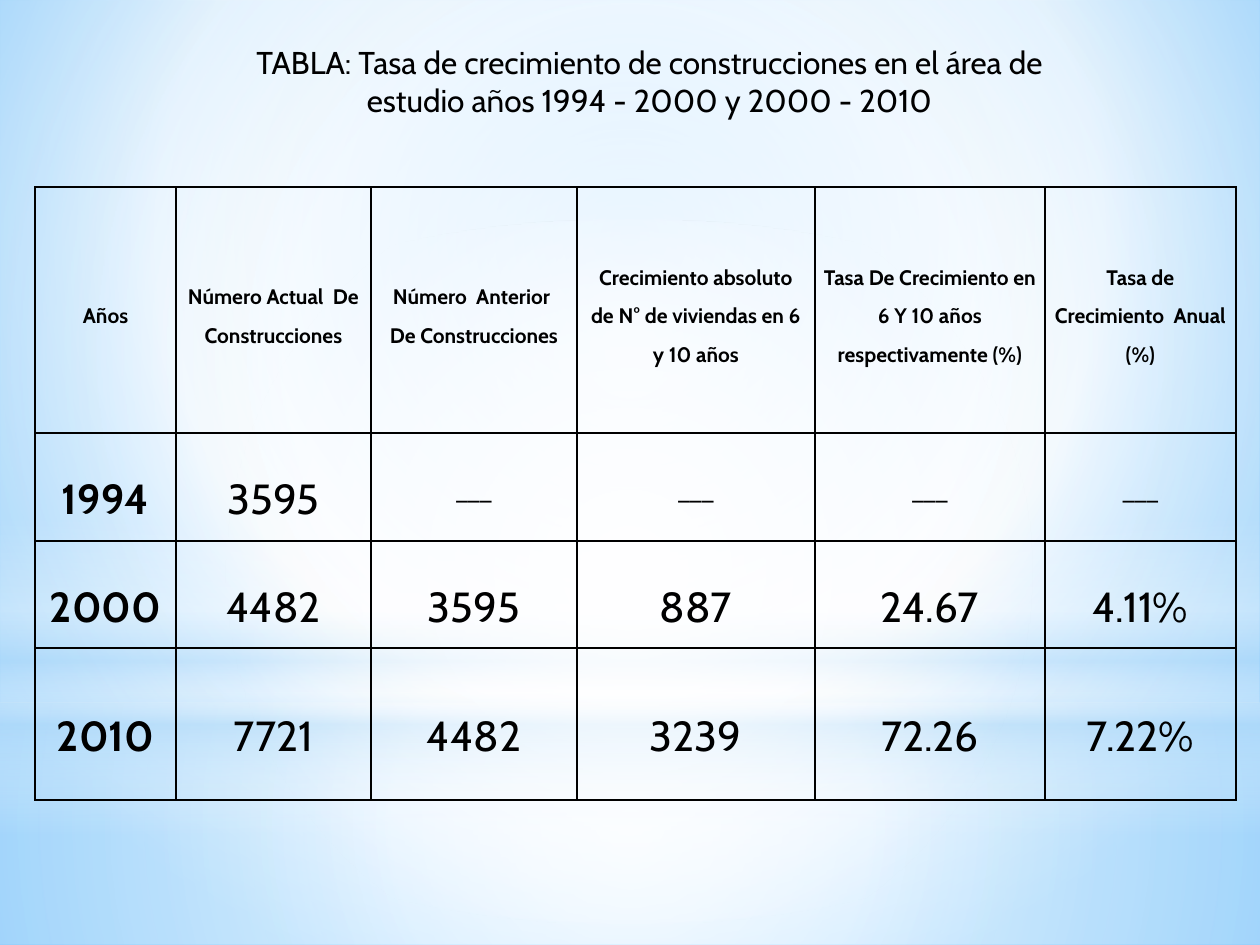
from lxml import etree
from pptx import Presentation
from pptx import util as u
from pptx.dml.color import RGBColor
from pptx.enum import shapes, text
from pptx.oxml import ns

PX = u.Inches(1) / 126
BLACK = RGBColor(0x00, 0x00, 0x00)
WHITE = RGBColor(0xFF, 0xFF, 0xFF)
SKY = RGBColor(0x9E, 0xD5, 0xFF)
BLUE = RGBColor(0x5B, 0xB9, 0xFF)
PALE = RGBColor(0xB4, 0xDC, 0xFA)
FONT = "Cabin"
MID = (50, 50, 50, 50)

HEADS = ["Años", "Número Actual  De Construcciones",
         "Número  Anterior  De Construcciones",
         "Crecimiento absoluto de N° de viviendas en 6 y 10 años",
         "Tasa De Crecimiento en 6 Y 10 años respectivamente (%)",
         "Tasa de Crecimiento  Anual (%)"]
DASH = "___"
ROWS = [HEADS,
        ["1994", "3595", DASH, DASH, DASH, DASH],
        ["2000", "4482", "3595", "887", "24.67", "4.11%"],
        ["2010", "7721", "4482", "3239", "72.26", "7.22%"]]
COLS = [141, 195, 206, 238, 230, 191]
TALL = [246, 108, 107, 152]


def emu(*vals):
    return [round(v * PX) for v in vals]


def apply(obj, **vals):
    for name, val in vals.items():
        setattr(obj, name, val)


def sub(node, tag, **vals):
    return etree.SubElement(node, ns.qn(tag), {k: str(v) for k, v in vals.items()})


def write(frame, words, size, bold=False):
    par = frame.paragraphs[0]
    par.alignment = text.PP_ALIGN.CENTER
    run = par.add_run()
    run.text = words
    apply(run.font, name=FONT, size=u.Pt(size), bold=bold)
    run.font.color.rgb = BLACK
    return par


def blend(node, stops, focus=None):
    """Turn the solid fill in node into a gradient: round with a focus, else vertical."""
    old = node.find(ns.qn("a:solidFill"))
    grad = etree.Element(ns.qn("a:gradFill"), rotWithShape="1")
    node.replace(old, grad)
    steps = sub(grad, "a:gsLst")
    for pos, color, alpha in stops:
        stop = sub(steps, "a:gs", pos=pos * 1000)
        tint = sub(stop, "a:srgbClr", val=color)
        if alpha < 100:
            sub(tint, "a:alpha", val=alpha * 1000)
    if focus:
        ring = sub(grad, "a:path", path="circle")
        sub(ring, "a:fillToRect", **{k: v * 1000 for k, v in zip("ltrb", focus)})
    else:
        sub(grad, "a:lin", ang=5400000, scaled=0)


def glow(slide, box, stops, focus=None, kind=shapes.MSO_SHAPE.RECTANGLE):
    shape = slide.shapes.add_shape(kind, *emu(*box))
    shape.shadow.inherit = False
    shape.line.fill.background()
    shape.fill.solid()
    blend(shape.element.spPr, stops, focus)


def backdrop(slide, box):
    x, y, w, h = box
    # Page colour
    slide.background.fill.solid()
    blend(slide.element.xpath(".//p:bgPr")[0],
          [(0, SKY, 100), (60, WHITE, 100), (100, BLUE, 100)], (20, 10, 20, 60))
    # Veils over the lower and upper parts
    cut = 703
    glow(slide, (x, y + cut, w, h - cut),
         [(0, WHITE, 91), (37, WHITE, 76), (100, PALE, 79)], MID)
    glow(slide, (x, y, w, cut),
         [(0, WHITE, 89), (48, WHITE, 62), (100, PALE, 79)], MID)
    # Horizon band
    glow(slide, (x, y + 519, w, 315),
         [(0, WHITE, 0), (29, WHITE, 30), (45, PALE, 40),
          (55, WHITE, 26), (65, PALE, 60), (100, WHITE, 0)])
    # Central light
    glow(slide, (x, y + 220, w, cut), [(0, WHITE, 100), (56, WHITE, 0)],
         MID, shapes.MSO_SHAPE.OVAL)


def title(slide, box):
    frame = slide.shapes.add_textbox(*emu(*box)).text_frame
    apply(frame, word_wrap=True, auto_size=text.MSO_AUTO_SIZE.SHAPE_TO_FIT_TEXT)
    write(frame, "TABLA: Tasa de crecimiento de construcciones en el área de "
                 "estudio años 1994 - 2000 y 2000 - 2010", 18)


def border(cell):
    props = cell._tc.get_or_add_tcPr()
    for spot, side in enumerate("LRTB"):
        line = etree.Element(ns.qn("a:ln" + side), w=str(u.Pt(1)))
        sub(sub(line, "a:solidFill"), "a:srgbClr", val=BLACK)
        props.insert(spot, line)


def grid(slide, left, top):
    box = emu(left, top, sum(COLS), sum(TALL))
    table = slide.shapes.add_table(len(ROWS), len(COLS), *box).table
    apply(table, first_row=False, horz_banding=False)
    for col, wide in zip(table.columns, emu(*COLS)):
        col.width = wide
    for row, tall in zip(table.rows, emu(*TALL)):
        row.height = tall
    side = u.Inches(0.07)
    for r, row in enumerate(ROWS):
        for c, words in enumerate(row):
            cell = table.cell(r, c)
            apply(cell, vertical_anchor=text.MSO_ANCHOR.MIDDLE, margin_left=side,
                  margin_right=side, margin_top=0, margin_bottom=0)
            size = 12 if r == 0 or words == DASH else 24
            par = write(cell.text_frame, words, size, r == 0 or c == 0)
            apply(par, line_spacing=1.5, space_before=u.Pt(14.4),
                  space_after=u.Pt(14.4))
            cell.fill.background()
            border(cell)


def main():
    deck = Presentation()
    wide, tall = 1260, 945
    deck.slide_width, deck.slide_height = emu(wide, tall)
    slide = deck.slides.add_slide(deck.slide_layouts[6])
    backdrop(slide, (0, 0, wide, tall))
    title(slide, (213, 37, 873, 89))
    grid(slide, 35, 187)
    deck.save("out.pptx")


if __name__ == "__main__":
    main()
